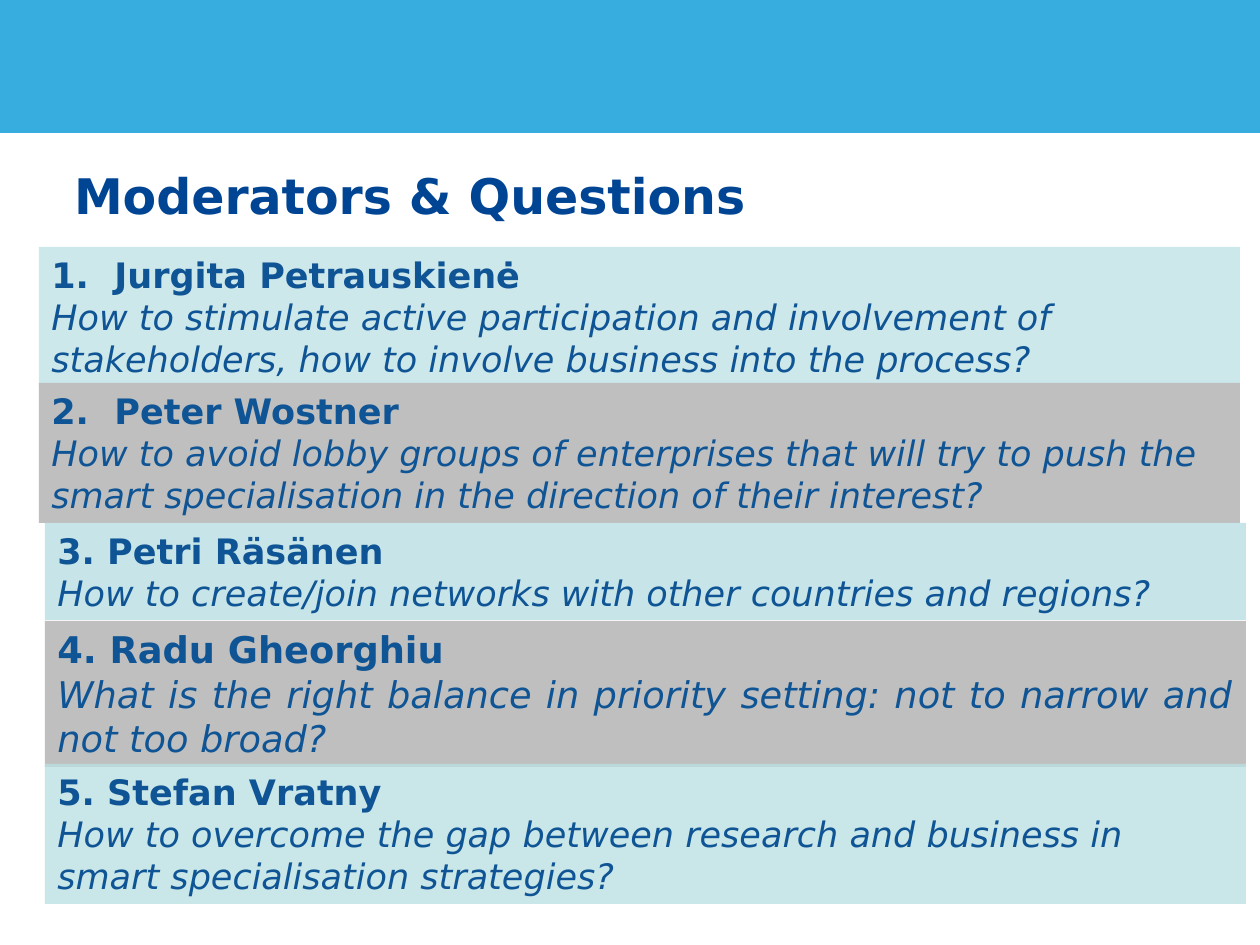
from lxml.etree import SubElement
from pptx import Presentation
from pptx.dml.color import RGBColor
from pptx.enum.shapes import MSO_SHAPE as Shape
from pptx.enum.text import MSO_ANCHOR as Anchor, PP_ALIGN as Align
from pptx.oxml.ns import qn
from pptx.util import Emu, Pt

PX = 914400 // 126
FONT = "DejaVu Sans"
COLORS = {"banner": "37ACDE", "title": "004494", "text": "0F5494",
          "teal": "BBE0E3", "gray": "BFBFBF"}
HANGING = 63

# left, top, height, fill, opacity in percent, text size, numbering, name, question
MODERATORS = [
    (39, 247, 140, "teal", 72, 20, "auto", "Jurgita Petrauskienė",
     "How to stimulate active participation and involvement of stakeholders, "
     "how to involve business into the process?"),
    (39, 383, 140, "gray", 100, 20, "tab", "2.\tPeter Wostner",
     "How to avoid lobby groups of enterprises that will try to push the smart "
     "specialisation in the direction of their interest?"),
    (45, 523, 97, "teal", 82, 20, None, "3. Petri Räsänen",
     "How to create/join networks with other countries and regions?"),
    (45, 621, 146, "gray", 100, 21, None, "4. Radu Gheorghiu",
     "What is the right balance in priority setting: not to narrow and not too broad?"),
    (45, 764, 140, "teal", 79, 20, None, "5. Stefan Vratny",
     "How to overcome the gap between research and business in smart "
     "specialisation strategies?"),
]
JUSTIFIED = "4. Radu Gheorghiu"


def px(length):
    return Emu(length * PX)


def rgb(name):
    return RGBColor.from_string(COLORS[name])


def set_font(paragraph, color, **values):
    for key, value in {"name": FONT, **values}.items():
        setattr(paragraph.font, key, value)
    paragraph.font.color.rgb = rgb(color)


def add_band(slide, left, top, width, height, color, opacity=100):
    band = slide.shapes.add_shape(Shape.RECTANGLE, *map(px, (left, top, width, height)))
    band.shadow.inherit = False
    band.fill.solid()
    band.fill.fore_color.rgb = rgb(color)
    band.line.fill.background()
    if opacity < 100:
        fill_color = band.fill._xPr.find(qn("a:solidFill"))[0]
        SubElement(fill_color, qn("a:alpha"), val=str(opacity * 1000))
    return band


def hang_number(paragraph, automatic):
    """Set the name off from its number by a hanging indent."""
    properties = paragraph._p.get_or_add_pPr()
    properties.set("marL", str(px(HANGING)))
    properties.set("indent", str(-px(HANGING)))
    if automatic:
        SubElement(properties, qn("a:buFont"), typeface="+mj-lt")
        SubElement(properties, qn("a:buAutoNum"), type="arabicPeriod")


def add_moderator(slide, left, top, height, color, opacity, size, numbering, name, question):
    frame = add_band(slide, left, top, 1201, height, color, opacity).text_frame
    frame.word_wrap = True
    frame.vertical_anchor = Anchor.TOP
    heading, body = frame.paragraphs[0], frame.add_paragraph()
    if numbering:
        hang_number(heading, numbering == "auto")
    for paragraph, text, style in ((heading, name, {"bold": True}),
                                   (body, question, {"italic": True})):
        paragraph.text = text
        paragraph.alignment = Align.JUSTIFY if name == JUSTIFIED else Align.LEFT
        set_font(paragraph, "text", size=Pt(size), **style)


def set_title(slide, text):
    title = slide.shapes.title
    title.left, title.top, title.width, title.height = map(px, (74, 165, 1097, 59))
    frame = title.text_frame
    for key, value in {"margin_left": 0, "margin_top": 0, "margin_right": 0,
                       "margin_bottom": 0, "word_wrap": True,
                       "vertical_anchor": Anchor.TOP}.items():
        setattr(frame, key, value)
    frame.text = text
    frame.paragraphs[0].alignment = Align.LEFT
    set_font(frame.paragraphs[0], "title", size=Pt(28), bold=True)


def main():
    deck = Presentation()
    deck.slide_width, deck.slide_height = px(1260), px(945)
    slide = deck.slides.add_slide(deck.slide_layouts[5])
    banner = add_band(slide, 0, 0, 1260, 132, "banner")
    banner.line.color.rgb = rgb("banner")
    banner.line.width = Pt(0.75)
    set_title(slide, "Moderators & Questions")
    for moderator in MODERATORS:
        add_moderator(slide, *moderator)
    deck.save("out.pptx")


if __name__ == "__main__":
    main()
